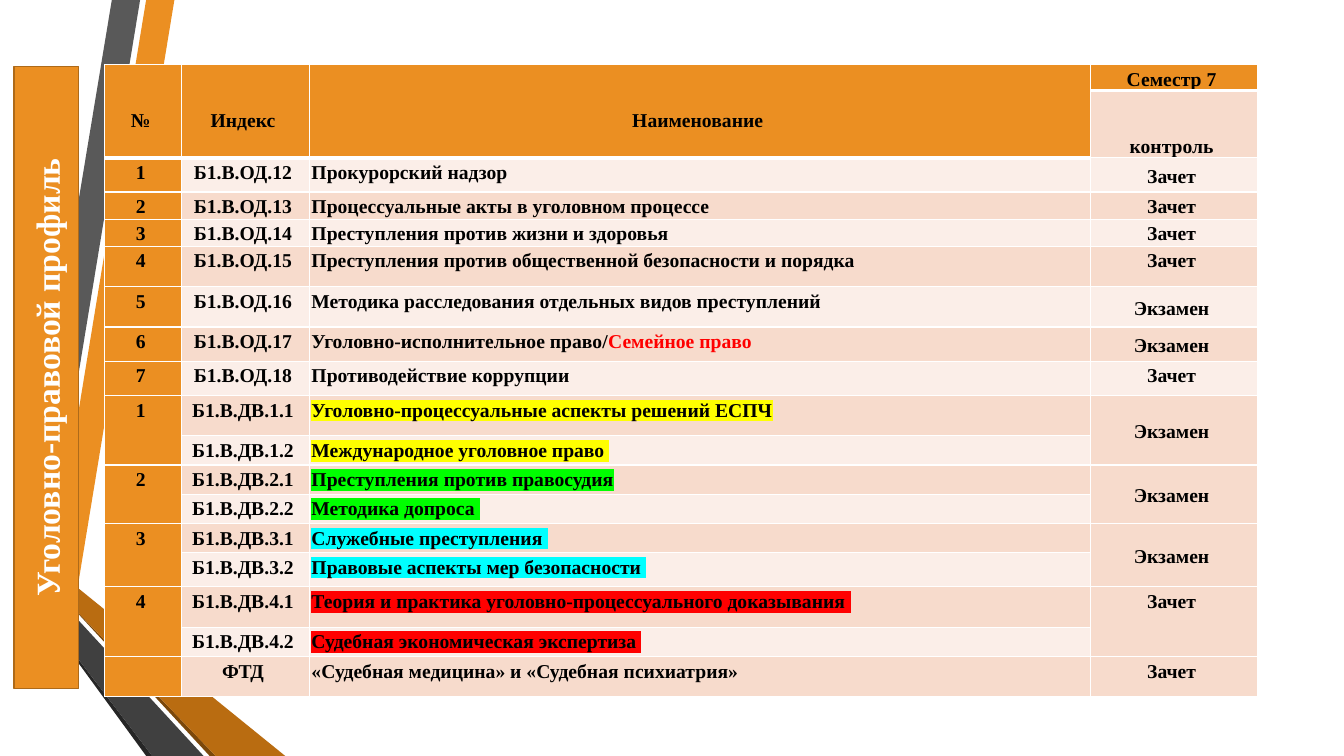
from dataclasses import dataclass

from lxml import etree
from pptx import Presentation
from pptx.dml.color import RGBColor
from pptx.enum.shapes import MSO_SHAPE
from pptx.enum.text import MSO_ANCHOR, PP_ALIGN
from pptx.oxml.ns import qn
from pptx.util import Pt

PX = 9144  # 100 px to the inch
FONT = "Times New Roman"
LEFT, CENTER = PP_ALIGN.LEFT, PP_ALIGN.CENTER
TOP, MIDDLE = MSO_ANCHOR.TOP, MSO_ANCHOR.MIDDLE
RECTANGLE = MSO_SHAPE.RECTANGLE

COLORS = {
    "orange": "EB8F22", "outline": "AE6A19", "brown": "B96C11", "dark brown": "7B480B",
    "gray": "595959", "dark gray": "404040", "near black": "262626",
    "band dark": "F7DBCC", "band light": "FBEEE8",
    "black": "000000", "white": "FFFFFF", "red": "FF0000",
    "yellow": "FFFF00", "green": "00FF00", "cyan": "00FFFF",
}


@dataclass
class Ribbon:
    color: str
    points: list[tuple[int, int]]


@dataclass
class Course:
    number: str | None  # None continues the pair above
    index: str
    name: str
    control: str | None
    height: int
    middle: bool = False
    highlight: str | None = None
    alternative: str = ""


RIBBONS = [
    Ribbon("orange", [(50, 578), (77, 583), (173, 0), (145, 0)]),
    Ribbon("gray", [(139, 0), (111, 0), (16, 573), (44, 577)]),
    Ribbon("near black", [(16, 573), (145, 750), (151, 750)]),
    Ribbon("dark brown", [(50, 579), (208, 750), (214, 750)]),
    Ribbon("brown", [(50, 579), (214, 750), (283, 750), (77, 583), (50, 578)]),
    Ribbon("dark gray", [(202, 750), (48, 583), (43, 578), (44, 577), (16, 573), (151, 750)]),
]

COLUMN_WIDTHS = [76, 127, 775, 165]
HEADER_HEIGHTS = [20, 63]
HEADERS = ["№", "Индекс", "Наименование"]
HEADER_DROP = 41
COURSES = [
    Course("1", "Б1.В.ОД.12", "Прокурорский надзор", "Зачет", 34, True),
    Course("2", "Б1.В.ОД.13", "Процессуальные акты в уголовном процессе", "Зачет", 27),
    Course("3", "Б1.В.ОД.14", "Преступления против жизни и здоровья", "Зачет", 27),
    Course("4", "Б1.В.ОД.15", "Преступления против общественной безопасности и порядка",
           "Зачет", 40),
    Course("5", "Б1.В.ОД.16", "Методика расследования отдельных видов преступлений",
           "Экзамен", 40, True),
    Course("6", "Б1.В.ОД.17", "Уголовно-исполнительное право/", "Экзамен", 34, True,
           alternative="Семейное право"),
    Course("7", "Б1.В.ОД.18", "Противодействие коррупции", "Зачет", 34),
    Course("1", "Б1.В.ДВ.1.1", "Уголовно-процессуальные аспекты решений ЕСПЧ",
           "Экзамен", 40, True, "yellow"),
    Course(None, "Б1.В.ДВ.1.2", "Международное уголовное право ", None, 29, False, "yellow"),
    Course("2", "Б1.В.ДВ.2.1", "Преступления против правосудия", "Экзамен", 29, True, "green"),
    Course(None, "Б1.В.ДВ.2.2", "Методика допроса ", None, 29, False, "green"),
    Course("3", "Б1.В.ДВ.3.1", "Служебные преступления ", "Экзамен", 29, True, "cyan"),
    Course(None, "Б1.В.ДВ.3.2", "Правовые аспекты мер безопасности ", None, 34, False, "cyan"),
    Course("4", "Б1.В.ДВ.4.1", "Теория и практика уголовно-процессуального доказывания ",
           "Зачет", 40, False, "red"),
    Course(None, "Б1.В.ДВ.4.2", "Судебная экономическая экспертиза ", None, 29, False, "red"),
    Course("", "ФТД", "«Судебная медицина» и «Судебная психиатрия»", "Зачет", 40),
]


def rgb(color: str) -> RGBColor:
    return RGBColor.from_string(COLORS[color])


def paint(target, color: str) -> None:
    target.fill.solid()
    target.fill.fore_color.rgb = rgb(color)


def add_text(paragraph, text: str, *, size: int = 14, color: str = "black",
             align=CENTER, highlight: str | None = None) -> None:
    paragraph.alignment = align
    run = paragraph.add_run()
    run.text = text
    run.font.size = Pt(size)
    run.font.bold = True
    run.font.color.rgb = rgb(color)
    run.font.name = FONT
    if highlight:
        mark = etree.Element(qn("a:highlight"))
        etree.SubElement(mark, qn("a:srgbClr"), val=COLORS[highlight])
        run.font.fill  # the highlight follows the text fill
        run._r.rPr.find(qn("a:solidFill")).addnext(mark)


def set_borders(cell, heavy_top: bool, heavy_bottom: bool) -> None:
    properties = cell._tc.get_or_add_tcPr()
    widths = {"lnL": 1, "lnR": 1, "lnT": 3 if heavy_top else 1, "lnB": 3 if heavy_bottom else 1}
    for position, (side, width) in enumerate(widths.items()):
        line = etree.Element(qn(f"a:{side}"), w=str(Pt(width)))
        fill = etree.SubElement(line, qn("a:solidFill"))
        etree.SubElement(fill, qn("a:srgbClr"), val=COLORS["white"])
        properties.insert(position, line)


def fill_cell(cell, text: str | None, *, color: str, align=CENTER, anchor=TOP,
              drop: int = 0, highlight: str | None = None, alternative: str = "") -> None:
    paint(cell, color)
    cell.margin_left = cell.margin_right = 2 * PX
    cell.margin_top = (1 + drop) * PX
    cell.margin_bottom = 0
    cell.vertical_anchor = anchor
    if not text:
        return
    paragraph = cell.text_frame.paragraphs[0]
    paragraph.line_spacing = 1.15
    paragraph.space_after = Pt(10)
    ending = " " if align == CENTER else ""
    add_text(paragraph, text + ending, align=align, highlight=highlight)
    if alternative:
        add_text(paragraph, alternative, color="red", align=align)


def add_ribbon(slide, ribbon: Ribbon) -> None:
    builder = slide.shapes.build_freeform(*ribbon.points[0], scale=PX)
    builder.add_line_segments(ribbon.points[1:], close=True)
    shape = builder.convert_to_shape()
    shape.shadow.inherit = False
    paint(shape, ribbon.color)
    shape.line.fill.background()


def add_profile_banner(slide) -> None:
    shape = slide.shapes.add_shape(RECTANGLE, 14 * PX, 66 * PX, 64 * PX, 617 * PX)
    shape.shadow.inherit = False
    paint(shape, "orange")
    shape.line.color.rgb = rgb("outline")
    shape.line.width = Pt(1.25)
    shape.text_frame.vertical_anchor = MIDDLE
    shape.element.txBody.find(qn("a:bodyPr")).set("vert", "vert270")
    add_text(shape.text_frame.paragraphs[0], "Уголовно-правовой профиль", size=24, color="white")


def add_course_table(slide) -> None:
    heights = HEADER_HEIGHTS + [course.height for course in COURSES]
    table = slide.shapes.add_table(len(heights), len(COLUMN_WIDTHS), 104 * PX, 64 * PX,
                                   sum(COLUMN_WIDTHS) * PX, sum(heights) * PX).table
    for column, width in zip(table.columns, COLUMN_WIDTHS):
        column.width = width * PX
    for row, height in zip(table.rows, heights):
        row.height = height * PX

    # Header
    for column, title in enumerate(HEADERS):
        fill_cell(table.cell(0, column), title, color="orange", drop=HEADER_DROP)
        fill_cell(table.cell(1, column), None, color="orange")
        table.cell(0, column).merge(table.cell(1, column))
    fill_cell(table.cell(0, 3), "Семестр 7", color="orange")
    fill_cell(table.cell(1, 3), "контроль", color="band dark", drop=HEADER_DROP)

    # Courses
    for row, course in enumerate(COURSES, start=len(HEADER_HEIGHTS)):
        band = "band dark" if row % 2 else "band light"
        fill_cell(table.cell(row, 0), course.number, color="orange")
        fill_cell(table.cell(row, 1), course.index, color=band)
        fill_cell(table.cell(row, 2), course.name, color=band, align=LEFT,
                  highlight=course.highlight, alternative=course.alternative)
        fill_cell(table.cell(row, 3), course.control, color=band,
                  anchor=MIDDLE if course.middle else TOP)
        if course.number is None:
            for column in (0, 3):
                table.cell(row - 1, column).merge(table.cell(row, column))

    # Borders, heavy under the header
    for row in range(len(heights)):
        for column in range(len(COLUMN_WIDTHS)):
            first_body_row = 1 if column == 3 else 2
            set_borders(table.cell(row, column), row == first_body_row, row < first_body_row)


def main() -> None:
    presentation = Presentation()
    presentation.slide_width, presentation.slide_height = 1333 * PX, 750 * PX
    slide = presentation.slides.add_slide(presentation.slide_layouts[6])
    for ribbon in RIBBONS:
        add_ribbon(slide, ribbon)
    add_profile_banner(slide)
    add_course_table(slide)
    presentation.save("out.pptx")


if __name__ == "__main__":
    main()
